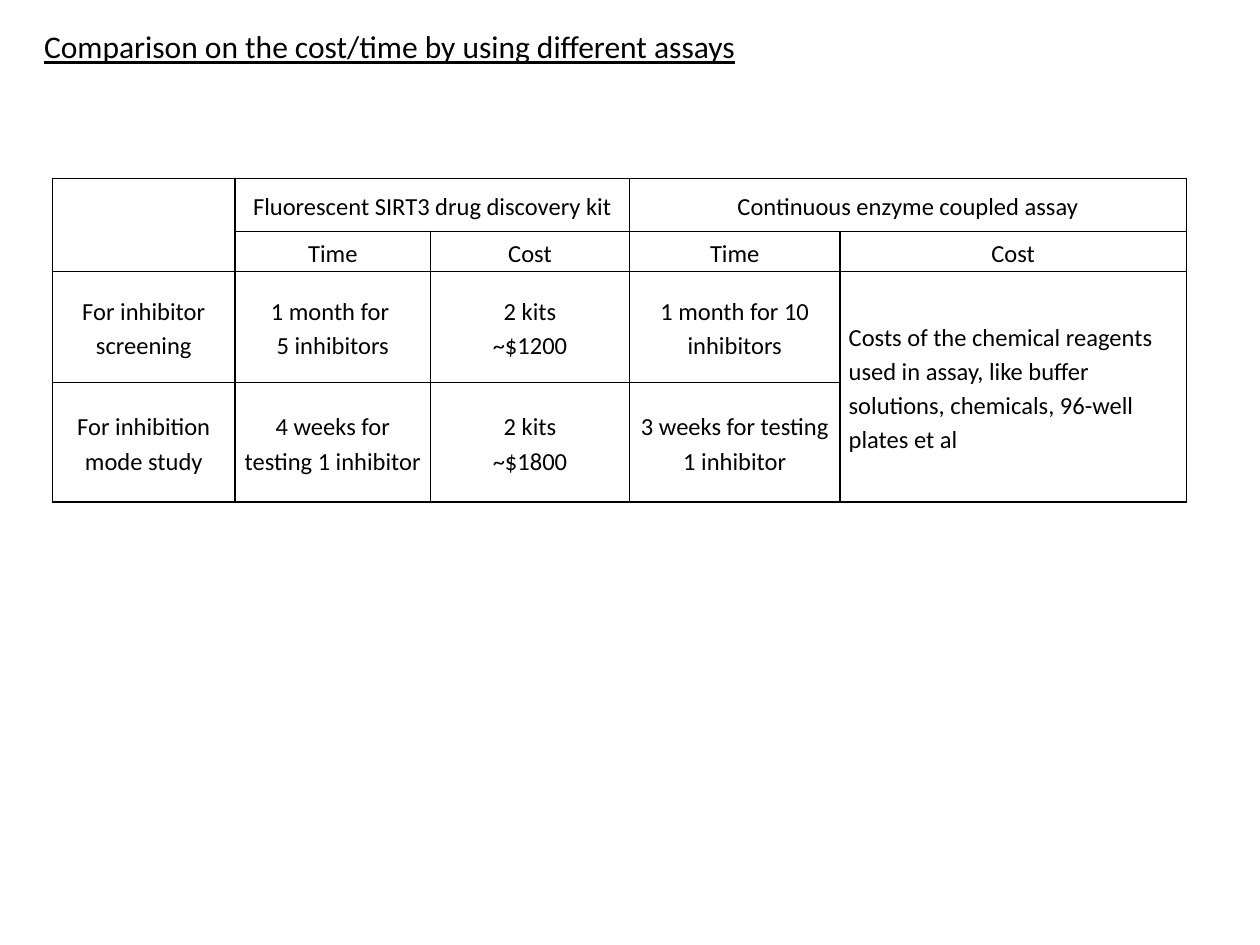
from lxml.etree import SubElement
from pptx import Presentation
from pptx.dml.color import RGBColor
from pptx.enum.text import MSO_ANCHOR, MSO_AUTO_SIZE, PP_ALIGN
from pptx.oxml import parse_xml
from pptx.oxml.ns import nsdecls, qn
from pptx.util import Pt

FONT = "Calibri"
BLACK = "000000"
COLUMN_WIDTHS = [104.4, 111.6, 113.76, 120.24, 198]
ROW_HEIGHTS = [30.24, 23.04, 63.36, 68.4]
ASSAY_ROWS = [
    ["", "Fluorescent SIRT3 drug discovery kit", "", "Continuous enzyme coupled assay", ""],
    ["", "Time", "Cost", "Time", "Cost"],
    ["For inhibitor screening", "1 month for \n5 inhibitors", "2 kits\n~$1200",
     "1 month for 10 inhibitors",
     "Costs of the chemical reagents used in assay, like buffer solutions, "
     "chemicals, 96-well plates et al"],
    ["For inhibition mode study", "4 weeks for testing 1 inhibitor", "2 kits\n~$1800",
     "3 weeks for testing 1 inhibitor", ""],
]
MERGES = [((0, 0), (1, 0)), ((0, 1), (0, 2)), ((0, 3), (0, 4)), ((2, 4), (3, 4))]
REAGENT_COST = (2, 4)


def color(hex_value):
    """Return the colour for a hex string."""
    return RGBColor.from_string(hex_value)


def set_font(paragraph, size):
    """Give a paragraph the slide's typeface and colour."""
    paragraph.font.name = FONT
    paragraph.font.size = Pt(size)
    paragraph.font.color.rgb = color(BLACK)


def add_title(slide, wording):
    """Fill and place the underlined slide title."""
    title = slide.shapes.title
    title.left, title.top, title.width, title.height = Pt(18), Pt(12), Pt(678), Pt(29)
    frame = title.text_frame
    frame.text = wording
    frame.word_wrap = True
    frame.auto_size = MSO_AUTO_SIZE.SHAPE_TO_FIT_TEXT
    frame.vertical_anchor = MSO_ANCHOR.TOP
    heading = frame.paragraphs[0]
    heading.alignment = PP_ALIGN.LEFT
    set_font(heading, 18)
    heading.font.underline = True


def add_borders(cell):
    """Draw a thin black line on all four sides of a cell."""
    properties = cell._tc.get_or_add_tcPr()
    for position, side in enumerate(["lnL", "lnR", "lnT", "lnB"]):
        border = parse_xml(f'<a:{side} {nsdecls("a")} w="{Pt(1)}"/>')
        fill = SubElement(border, qn("a:solidFill"))
        SubElement(fill, qn("a:srgbClr"), val=BLACK)
        properties.insert(position, border)


def format_cell(cell, wording, alignment):
    """Write and format one table cell."""
    cell.text = wording
    cell.fill.background()
    cell.vertical_anchor = MSO_ANCHOR.MIDDLE
    cell.margin_left = cell.margin_right = Pt(5)
    cell.margin_top = cell.margin_bottom = Pt(0)
    for paragraph in cell.text_frame.paragraphs:
        paragraph.alignment = alignment
        paragraph.line_spacing = 1.15
        set_font(paragraph, 14)
    add_borders(cell)


def add_comparison(slide):
    """Add the table comparing time and cost of the assays."""
    comparison = slide.shapes.add_table(
        len(ROW_HEIGHTS), len(COLUMN_WIDTHS), Pt(30), Pt(102),
        Pt(sum(COLUMN_WIDTHS)), Pt(sum(ROW_HEIGHTS))).table
    comparison.first_row = comparison.horz_banding = False
    for column, width in zip(comparison.columns, COLUMN_WIDTHS):
        column.width = Pt(width)
    for row, height in zip(comparison.rows, ROW_HEIGHTS):
        row.height = Pt(height)
    for row_index, wordings in enumerate(ASSAY_ROWS):
        for column_index, wording in enumerate(wordings):
            place = (row_index, column_index)
            alignment = PP_ALIGN.LEFT if place == REAGENT_COST else PP_ALIGN.CENTER
            format_cell(comparison.cell(*place), wording, alignment)
    for first, last in MERGES:
        comparison.cell(*first).merge(comparison.cell(*last))


def main():
    """Build and save the slide."""
    presentation = Presentation()
    presentation.slide_width, presentation.slide_height = Pt(720), Pt(540)
    slide = presentation.slides.add_slide(presentation.slide_layouts[5])
    add_title(slide, "Comparison on the cost/time by using different assays")
    add_comparison(slide)
    presentation.save("out.pptx")


if __name__ == "__main__":
    main()
